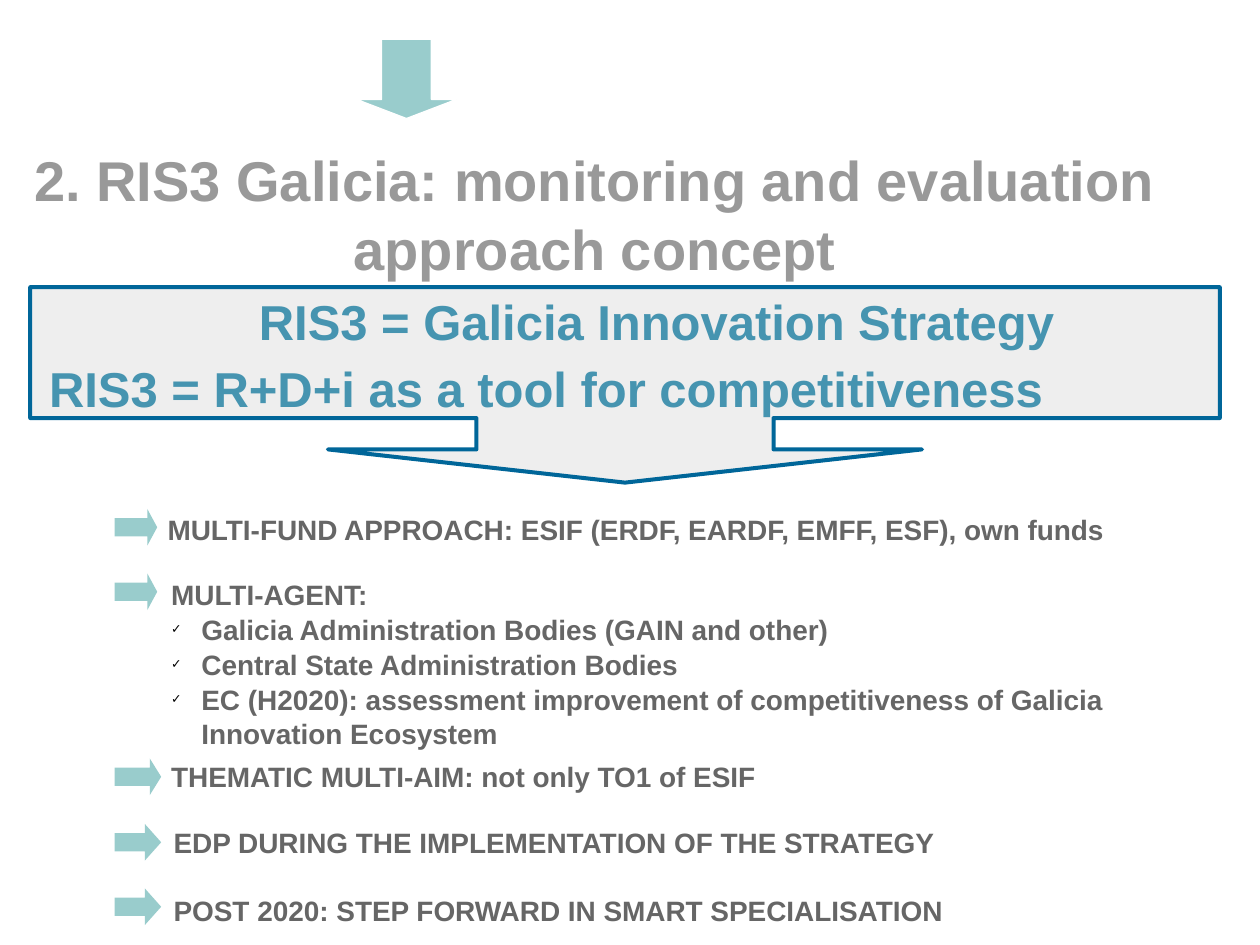
"""Build the RIS3 Galicia monitoring and evaluation slide."""
from lxml import etree
from pptx import Presentation
from pptx.dml.color import RGBColor
from pptx.enum.shapes import MSO_SHAPE
from pptx.enum.text import MSO_ANCHOR, MSO_AUTO_SIZE, PP_ALIGN
from pptx.oxml.ns import qn
from pptx.util import Cm, Pt

CENTER, LEFT = PP_ALIGN.CENTER, PP_ALIGN.LEFT
RIGHT_ARROW, DOWN_ARROW = MSO_SHAPE.RIGHT_ARROW, MSO_SHAPE.DOWN_ARROW
CALLOUT = MSO_SHAPE.DOWN_ARROW_CALLOUT
COLORS = {"title": "999999", "text": "666666", "strategy": "4694B0",
          "arrow": "99CCCC", "panel": "EEEEEE", "border": "006699",
          "white": "FFFFFF", "check": "000000"}


def add_figure(kind, box, fill, adjustments, line=None, width=0):
    sp = s.shapes.add_shape(kind, *map(Cm, box))
    sp.shadow.inherit = False
    for i, value in enumerate(adjustments):
        sp.adjustments[i] = value
    sp.fill.solid()
    sp.fill.fore_color.rgb = RGBColor.from_string(COLORS[fill])
    if line:
        sp.line.color.rgb = RGBColor.from_string(COLORS[line])
        sp.line.width = Pt(width)
    else:
        sp.line.fill.background()


def write(sp, box, text, size, color, align=LEFT, gap=0):
    sp.left, sp.top, sp.width, sp.height = map(Cm, box)
    tf = sp.text_frame
    tf.text = text
    tf.word_wrap = True
    tf.auto_size = MSO_AUTO_SIZE.NONE
    tf.vertical_anchor = MSO_ANCHOR.TOP
    tf.margin_left = Cm(0.2)
    tf.margin_top = tf.margin_right = tf.margin_bottom = 0
    for i, p in enumerate(tf.paragraphs):
        p.alignment = align
        p.line_spacing = 1.04
        p.space_before = Pt(gap if i else 0)
        for r in p.runs:
            r.font.name = "Arial"
            r.font.size = Pt(size)
            r.font.bold = True
            r.font.color.rgb = RGBColor.from_string(COLORS[color])
    return tf


prs = Presentation()
prs.slide_width, prs.slide_height = Cm(25.4), Cm(19.05)
s = prs.slides.add_slide(prs.slide_layouts[1])
title, body = s.placeholders

add_figure(DOWN_ARROW, (7.19, 0.79, 2.01, 1.6), "arrow", (0.5, 0.24), "white", 0.75)
add_figure(CALLOUT, (0.61, 5.79, 23.98, 3.94), "panel",
           (1.52, 1.52, 0.17, 0.67), "border", 2.3)

arrow_height = 0.74
for top, width, head in [(10.26, 0.86, 0.2), (11.56, 0.86, 0.2), (15.29, 0.94, 0.23),
                         (16.61, 0.94, 0.33), (17.91, 0.94, 0.33)]:
    add_figure(RIGHT_ARROW, (2.31, top, width, arrow_height), "arrow",
               (0.5, head / arrow_height))

write(title, (-1.3, 2.87, 26.39, 2.54),
      "2. RIS3 Galicia: monitoring and evaluation approach concept", 32, "title", CENTER)

agents = write(body, (3.25, 11.61, 19.46, 4.27),
               "MULTI-AGENT:\n"
               "Galicia Administration Bodies (GAIN and other)\n"
               "Central State Administration Bodies\n"
               "EC (H2020): assessment improvement of competitiveness of Galicia "
               "Innovation Ecosystem", 16, "text")
for i, p in enumerate(agents.paragraphs):
    pPr = p._p.get_or_add_pPr()
    indent = Cm(0.61) if i else 0
    pPr.set("marL", str(indent))
    pPr.set("indent", str(-indent))
    if i:
        color = etree.SubElement(pPr, qn("a:buClr"))
        etree.SubElement(color, qn("a:srgbClr"), val=COLORS["check"])
        etree.SubElement(pPr, qn("a:buSzPct"), val="45000")
        etree.SubElement(pPr, qn("a:buChar"), char="✓")
    else:
        etree.SubElement(pPr, qn("a:buNone"))

for box, text, size, color, align, gap in [
    ((0.84, 5.84, 24.59, 1.3), "RIS3 = Galicia Innovation Strategy",
     28, "strategy", CENTER, 0),
    ((0.79, 7.19, 23.9, 2.54), "RIS3 = R+D+i as a tool for competitiveness",
     28, "strategy", LEFT, 0),
    ((3.18, 10.31, 19.38, 1.57),
     "MULTI-FUND APPROACH: ESIF (ERDF, EARDF, EMFF, ESF), own funds",
     16, "text", LEFT, 0),
    ((3.25, 15.29, 20.9, 1.57), "THEMATIC MULTI-AIM: not only TO1 of ESIF",
     16, "text", LEFT, 0),
    ((3.3, 16.61, 23.6, 2.59),
     "EDP DURING THE IMPLEMENTATION OF THE STRATEGY\n"
     "POST 2020: STEP FORWARD IN SMART SPECIALISATION", 16, "text", LEFT, 19),
]:
    write(s.shapes.add_textbox(0, 0, 0, 0), box, text, size, color, align, gap)

prs.save("out.pptx")
